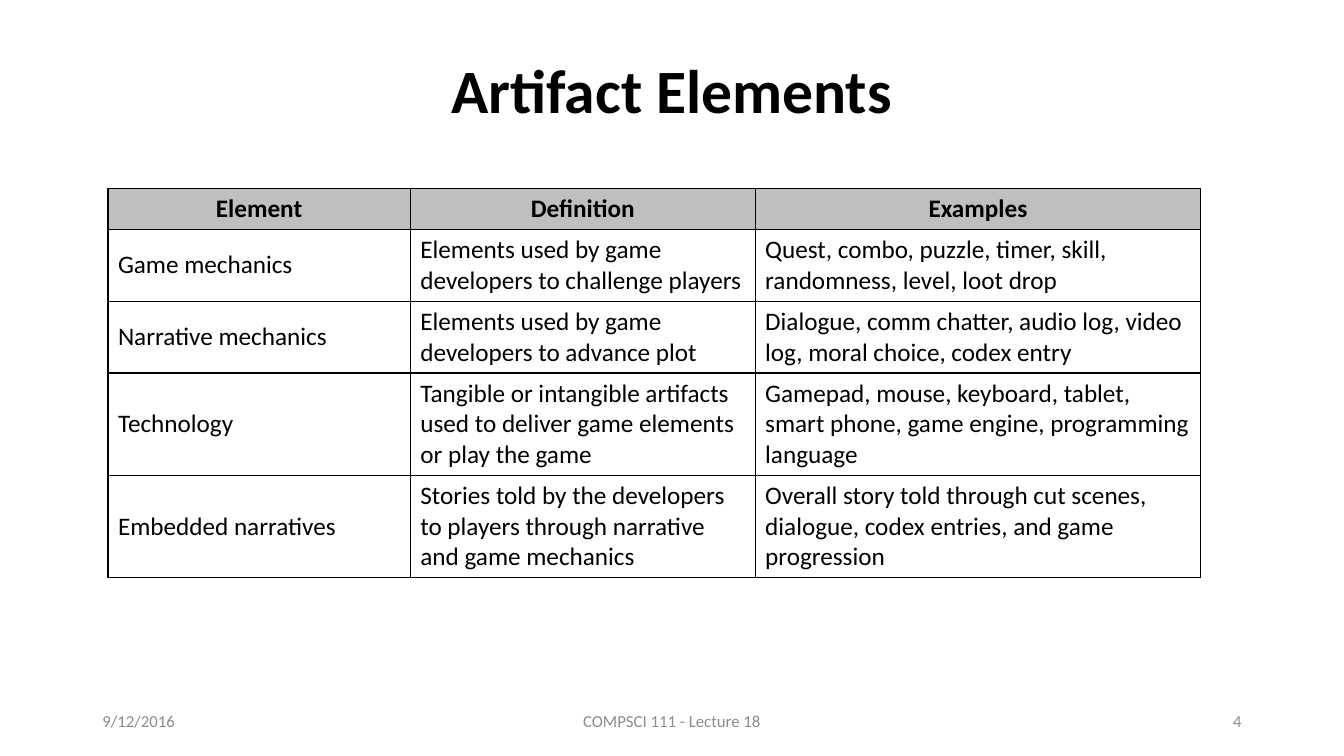
from dataclasses import dataclass

from lxml.etree import SubElement
from pptx import Presentation
from pptx.dml.color import RGBColor
from pptx.enum.text import MSO_VERTICAL_ANCHOR as Anchor, PP_PARAGRAPH_ALIGNMENT as Align
from pptx.oxml.ns import qn
from pptx.slide import Slide
from pptx.table import _Cell as Cell
from pptx.text.text import TextFrame
from pptx.util import Cm, Pt


@dataclass(frozen=True)
class Style:
    size: float
    color: str = "000000"
    bold: bool = False
    align: Align = Align.LEFT
    spacing: float = 1.0


@dataclass(frozen=True)
class Label:
    text: str
    left: float
    top: float
    width: float
    height: float
    style: Style


@dataclass(frozen=True)
class Element:
    name: str
    definition: str
    examples: str
    height: float


FONT = "Calibri"
GREY = "8C8C8C"
HEADER_FILL = "BFBFBF"
BODY_FILL = "FFFFFF"
BORDER = "000000"
FOOTER_TOP, FOOTER_HEIGHT = 17.65, 1.02
TABLE_LEFT, TABLE_TOP = 2.72, 4.75
COLUMN_WIDTHS = (7.62, 8.69, 11.23)
HEADER_HEIGHT, TWO_LINES, THREE_LINES = 1.03, 1.81, 2.58

HEADER_STYLE = Style(18, bold=True, align=Align.CENTER)
BODY_STYLE = Style(18)

LABELS = (
    Label("Artifact Elements", 2.33, 0.51, 29.21, 3.68,
          Style(44, bold=True, align=Align.CENTER, spacing=0.9)),
    Label("9/12/2016", 2.33, FOOTER_TOP, 7.62, FOOTER_HEIGHT, Style(12, GREY)),
    Label("COMPSCI 111 - Lecture 18", 11.22, FOOTER_TOP, 11.43, FOOTER_HEIGHT,
          Style(12, GREY, align=Align.CENTER)),
    Label("4", 23.92, FOOTER_TOP, 7.62, FOOTER_HEIGHT,
          Style(12, GREY, align=Align.RIGHT)),
)

ELEMENTS = (
    Element("Element", "Definition", "Examples", HEADER_HEIGHT),
    Element("Game mechanics",
            "Elements used by game developers to challenge players",
            "Quest, combo, puzzle, timer, skill, randomness, level, loot drop",
            TWO_LINES),
    Element("Narrative mechanics",
            "Elements used by game developers to advance plot",
            "Dialogue, comm chatter, audio log, video log, moral choice, codex entry",
            TWO_LINES),
    Element("Technology",
            "Tangible or intangible artifacts used to deliver game elements or play the game",
            "Gamepad, mouse, keyboard, tablet, smart phone, game engine, programming language",
            THREE_LINES),
    Element("Embedded narratives",
            "Stories told by the developers to players through narrative and game mechanics",
            "Overall story told through cut scenes, dialogue, codex entries, and game progression",
            THREE_LINES),
)


def rgb(color: str) -> RGBColor:
    return RGBColor.from_string(color)


def apply(target: object, values: dict) -> None:
    for attribute, value in values.items():
        setattr(target, attribute, value)


def write(frame: TextFrame, text: str, style: Style) -> None:
    paragraph = frame.paragraphs[0]
    apply(paragraph, {"alignment": style.align, "line_spacing": style.spacing})
    run = paragraph.add_run()
    run.text = text
    apply(run.font, {"name": FONT, "size": Pt(style.size), "bold": style.bold})
    run.font.color.rgb = rgb(style.color)


def draw_label(slide: Slide, label: Label) -> None:
    frame = slide.shapes.add_textbox(
        Cm(label.left), Cm(label.top), Cm(label.width), Cm(label.height)
    ).text_frame
    apply(frame, {"word_wrap": True, "vertical_anchor": Anchor.MIDDLE})
    write(frame, label.text, label.style)


def draw_borders(cell: Cell) -> None:
    properties = cell._tc.get_or_add_tcPr()
    for position, side in enumerate(("lnL", "lnR", "lnT", "lnB")):
        line = SubElement(properties, qn(f"a:{side}"), w=str(Pt(1)))
        fill = SubElement(line, qn("a:solidFill"))
        SubElement(fill, qn("a:srgbClr"), val=BORDER)
        properties.insert(position, line)


def draw_elements(slide: Slide) -> None:
    table = slide.shapes.add_table(
        len(ELEMENTS), len(COLUMN_WIDTHS), Cm(TABLE_LEFT), Cm(TABLE_TOP),
        Cm(sum(COLUMN_WIDTHS)), Cm(sum(element.height for element in ELEMENTS)),
    ).table
    for column, width in zip(table.columns, COLUMN_WIDTHS):
        column.width = Cm(width)
    for row_index, (row, element) in enumerate(zip(table.rows, ELEMENTS)):
        row.height = Cm(element.height)
        is_header = row_index == 0
        texts = (element.name, element.definition, element.examples)
        for column_index, (cell, text) in enumerate(zip(row.cells, texts)):
            is_name = column_index == 0 and not is_header
            cell.vertical_anchor = Anchor.MIDDLE if is_name else Anchor.TOP
            cell.fill.solid()
            cell.fill.fore_color.rgb = rgb(HEADER_FILL if is_header else BODY_FILL)
            draw_borders(cell)
            write(cell.text_frame, text, HEADER_STYLE if is_header else BODY_STYLE)


def main() -> None:
    deck = Presentation()
    apply(deck, {"slide_width": Cm(33.87), "slide_height": Cm(19.05)})
    slide = deck.slides.add_slide(deck.slide_layouts[6])
    for label in LABELS:
        draw_label(slide, label)
    draw_elements(slide)
    deck.save("out.pptx")


if __name__ == "__main__":
    main()
